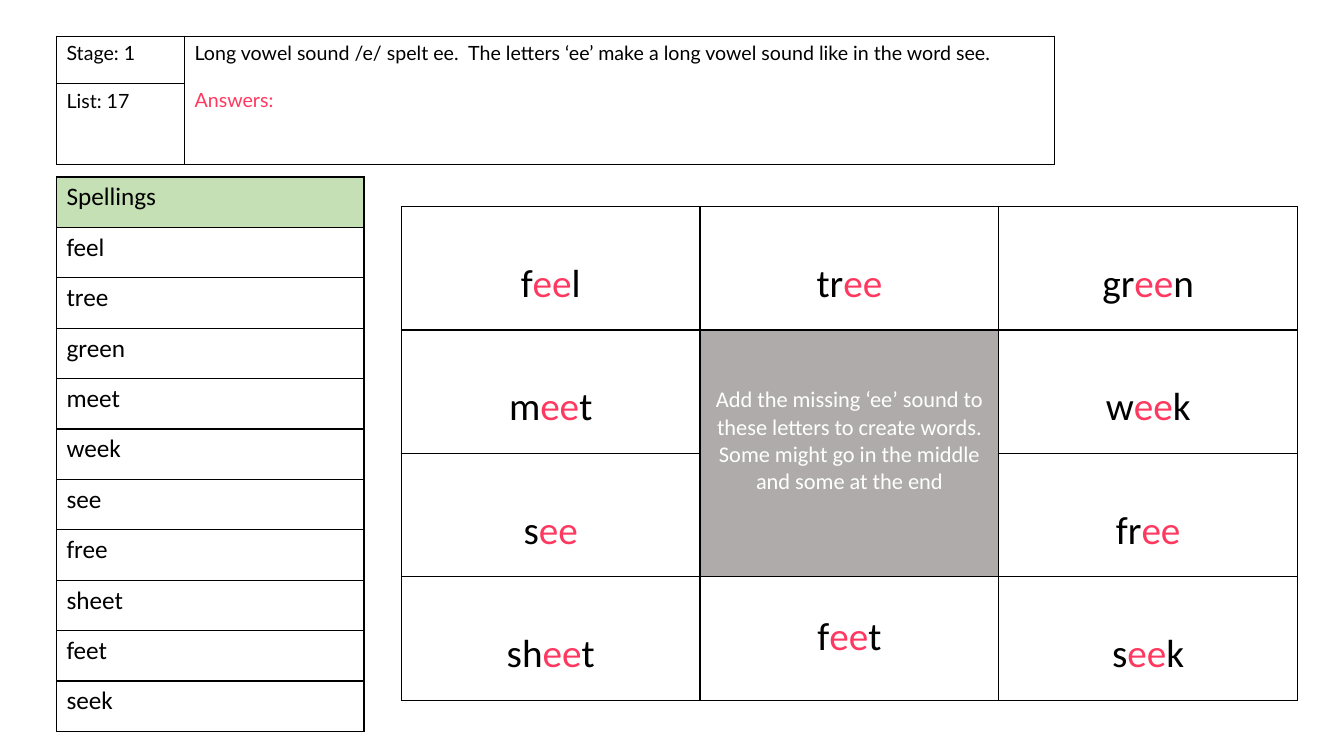
from dataclasses import dataclass

from lxml.etree import SubElement
from pptx import Presentation
from pptx.dml.color import RGBColor
from pptx.enum.text import PP_ALIGN as Align
from pptx.oxml.ns import qn
from pptx.table import Table, _Cell as Cell
from pptx.util import Emu, Inches, Pt

BLACK, WHITE, PINK = "000000", "FFFFFF", "FF3860"
GREEN, GREY = "C5E0B4", "AFABAB"
SOUND = "ee"
WORDS = ["feel", "tree", "green", "meet", "week",
         "see", "free", "sheet", "feet", "seek"]
RULE = "Long vowel sound /e/ spelt ee.  The letters ‘ee’ make a long vowel sound like in the word see."
TASK = ("Add the missing ‘ee’ sound to these letters to create words. "
        "Some might go in the middle and some at the end")


@dataclass(frozen=True)
class Grid:
    """A table whose lengths are percentages of the slide's width and height."""
    left: float
    top: float
    cols: list[float]
    rows: list[float]


@dataclass(frozen=True)
class Style:
    size: float
    font: str = "Calibri"
    align: Align = Align.LEFT
    top: float = 0.05


HEADER = Grid(4.2, 4.8, [9.53, 64.74], [6.27, 10.73])
SPELLINGS = Grid(4.2, 23.4, [22.88], [6.67] * (len(WORDS) + 1))
ANSWERS = Grid(29.86, 27.33, [22.23] * 3, [16.33] * 4)

HEADER_TEXT = Style(14, "Lato")
LIST_TEXT = Style(18)
WORD_TEXT = Style(28, align=Align.CENTER, top=0.53)
HIGH_WORD_TEXT = Style(28, align=Align.CENTER, top=0.36)
TASK_TEXT = Style(16, align=Align.CENTER, top=0.56)


def rgb(colour: str) -> RGBColor:
    return RGBColor.from_string(colour)


def add_borders(cell: Cell) -> None:
    tc_pr = cell._tc.get_or_add_tcPr()
    for side in ("a:lnL", "a:lnR", "a:lnT", "a:lnB"):
        ln = SubElement(tc_pr, qn(side), w=str(Pt(1)))
        fill = SubElement(ln, qn("a:solidFill"))
        SubElement(fill, qn("a:srgbClr"), val=BLACK)


def add_grid(prs, s, grid: Grid) -> Table:
    """Add a bordered table without fills or banding."""
    def across(share: float) -> Emu:
        return Emu(round(prs.slide_width * share / 100))

    def down(share: float) -> Emu:
        return Emu(round(prs.slide_height * share / 100))

    table = s.shapes.add_table(
        len(grid.rows), len(grid.cols), across(grid.left), down(grid.top),
        across(sum(grid.cols)), down(sum(grid.rows))).table
    table.first_row = table.horz_banding = False
    for column, share in zip(table.columns, grid.cols):
        column.width = across(share)
    for row, share in zip(table.rows, grid.rows):
        row.height = down(share)
    for cell in table.iter_cells():
        add_borders(cell)
        cell.fill.background()
    return table


def shade(cell: Cell, colour: str) -> None:
    cell.fill.solid()
    cell.fill.fore_color.rgb = rgb(colour)


def write(p, style: Style, *runs: tuple[str, str]) -> None:
    """Add (text, colour) runs to a paragraph."""
    p.alignment = style.align
    for text, colour in runs:
        r = p.add_run()
        r.text = text
        r.font.size = Pt(style.size)
        r.font.name = style.font
        r.font.color.rgb = rgb(colour)


def write_cell(cell: Cell, style: Style, *runs: tuple[str, str]) -> None:
    cell.margin_top = Inches(style.top)
    write(cell.text_frame.paragraphs[0], style, *runs)


def add_header(prs, s) -> None:
    table = add_grid(prs, s, HEADER)
    rule = table.cell(0, 1)
    rule.merge(table.cell(1, 1))
    for row, label in enumerate(["Stage: 1", "List: 17"]):
        write_cell(table.cell(row, 0), HEADER_TEXT, (label, BLACK))
    write_cell(rule, HEADER_TEXT, (RULE, BLACK))
    p = rule.text_frame.add_paragraph()
    p.space_before = Pt(17)
    write(p, HEADER_TEXT, ("Answers:", PINK))


def add_spellings(prs, s) -> None:
    table = add_grid(prs, s, SPELLINGS)
    shade(table.cell(0, 0), GREEN)
    for cell, text in zip(table.iter_cells(), ["Spellings", *WORDS]):
        write_cell(cell, LIST_TEXT, (text, BLACK))


def add_answers(prs, s) -> None:
    """Fill the words around the merged task cell, row by row."""
    table = add_grid(prs, s, ANSWERS)
    task = table.cell(1, 1)
    task.merge(table.cell(2, 1))
    shade(task, GREY)
    write_cell(task, TASK_TEXT, (TASK, WHITE))
    free = [c for c in table.iter_cells() if not (c.is_merge_origin or c.is_spanned)]
    for cell, word in zip(free, WORDS):
        start, sound, end = word.partition(SOUND)
        runs = [(start, BLACK), (sound, PINK)] + ([(end, BLACK)] if end else [])
        write_cell(cell, HIGH_WORD_TEXT if word == "feet" else WORD_TEXT, *runs)


def main() -> None:
    prs = Presentation()
    prs.slide_width, prs.slide_height = Inches(13.33), Inches(7.5)
    s = prs.slides.add_slide(prs.slide_layouts[6])
    add_spellings(prs, s)
    add_header(prs, s)
    add_answers(prs, s)
    prs.save("out.pptx")


if __name__ == "__main__":
    main()
